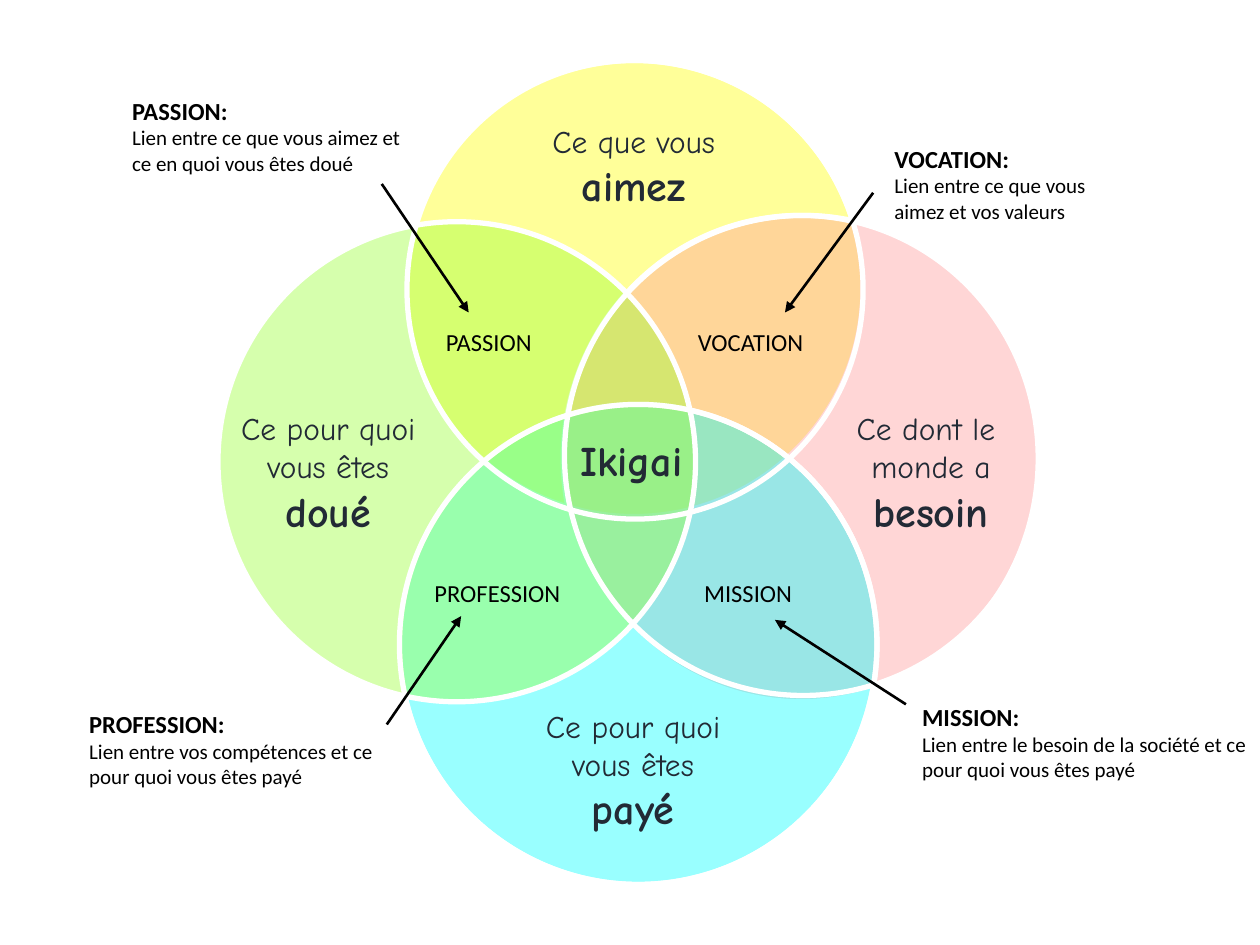
from pptx import Presentation
from pptx.dml.color import RGBColor
from pptx.enum.shapes import MSO_CONNECTOR as Connector, MSO_SHAPE as Shape
from pptx.enum.text import MSO_AUTO_SIZE as AutoSize, PP_ALIGN as Align
from pptx.oxml.ns import qn
from pptx.util import Inches, Pt
from lxml.etree import SubElement

COLORS = {
    "love": "FFFF00",
    "need": "FF9999",
    "paid": "00FFFF",
    "skill": "99FF33",
    "outline": "FFFFFF",
    "heading": "222A35",
    "text": "000000",
}
LABEL_FONT = "Calibri"
CIRCLE_FONT = "Comic Neue"


def color(name):
    return RGBColor.from_string(COLORS[name])


def line(text, size=14, font=LABEL_FONT, tone="text", bold=False):
    return {"text": text, "size": size, "font": font, "tone": tone, "bold": bold}


class Diagram:
    def __init__(self, page, opacity=40):
        self.page = page
        self.opacity = opacity

    def circle(self, left, top, width, height, fill=None):
        oval = self.page.shapes.add_shape(
            Shape.OVAL, Inches(left), Inches(top), Inches(width), Inches(height))
        oval.shadow.inherit = False
        oval.line.color.rgb = color("outline")
        oval.line.width = Pt(3)
        if fill is None:
            oval.fill.background()
            return
        oval.fill.solid()
        oval.fill.fore_color.rgb = color(fill)
        tint = oval._element.spPr.find(qn("a:solidFill")).find(qn("a:srgbClr"))
        SubElement(tint, qn("a:alpha")).set("val", str(self.opacity * 1000))

    def text(self, left, top, width, height, lines, align=Align.LEFT, wrap=False):
        box = self.page.shapes.add_textbox(
            Inches(left), Inches(top), Inches(width), Inches(height))
        frame = box.text_frame
        frame.word_wrap = wrap
        frame.auto_size = AutoSize.SHAPE_TO_FIT_TEXT
        for index, item in enumerate(lines):
            para = frame.add_paragraph() if index else frame.paragraphs[0]
            para.alignment = align
            span = para.add_run()
            span.text = item["text"]
            span.font.size = Pt(item["size"])
            span.font.name = item["font"]
            span.font.bold = item["bold"]
            span.font.color.rgb = color(item["tone"])

    def heading(self, left, top, width, height, *words):
        *intro, key = words
        lines = [line(word, 18, CIRCLE_FONT, "heading") for word in intro]
        lines.append(line(key, 24, CIRCLE_FONT, "heading", bold=True))
        self.text(left, top, width, height, lines, Align.CENTER)

    def note(self, left, top, width, title, detail):
        lines = [line(f"{title}:", bold=True), line(detail, 12)]
        self.text(left, top, width, 0.74, lines, wrap=True)

    def arrow(self, start_x, start_y, end_x, end_y):
        pointer = self.page.shapes.add_connector(
            Connector.STRAIGHT, Inches(start_x), Inches(start_y),
            Inches(end_x), Inches(end_y))
        pointer.line.color.rgb = color("text")
        pointer.line.width = Pt(1.5)
        properties = pointer._element.spPr
        SubElement(properties.find(qn("a:ln")), qn("a:tailEnd")).set("type", "triangle")
        SubElement(properties, qn("a:effectLst"))


def main():
    deck = Presentation()
    deck.slide_width, deck.slide_height = Inches(10), Inches(7.5)
    diagram = Diagram(deck.slides.add_slide(deck.slide_layouts[6]))

    for circle in [
        (3.21, 0.48, 3.64, 3.62, "love"),
        (4.47, 1.71, 3.77, 3.86, "need"),
        (3.17, 3.21, 3.79, 3.81, "paid"),
        (1.73, 1.76, 3.79, 3.81, "skill"),
        (3.23, 0.48, 3.62, 3.64),
        (4.48, 1.71, 3.79, 3.81),
        (3.17, 3.21, 3.79, 3.81),
    ]:
        diagram.circle(*circle)

    diagram.heading(4.45, 3.4, 1.12, 0.5, "Ikigai")
    for left, top, width, name in [
        (3.44, 2.55, 1.01, "PASSION"),
        (5.44, 2.55, 1.18, "VOCATION"),
        (3.35, 4.54, 1.37, "PROFESSION"),
        (5.49, 4.54, 1, "MISSION"),
    ]:
        diagram.text(left, top, width, 0.34, [line(name)])

    for heading in [
        (4.25, 0.92, 1.56, 0.81, "Ce que vous", "aimez"),
        (1.79, 3.2, 1.63, 1.11, "Ce pour quoi", "vous êtes", "doué"),
        (6.66, 3.2, 1.46, 1.11, "Ce dont le ", "monde a", "besoin"),
        (4.21, 5.56, 1.63, 1.11, "Ce pour quoi", "vous êtes", "payé"),
    ]:
        diagram.heading(*heading)

    for arrow in [
        (3.03, 1.46, 3.72, 2.48),
        (6.93, 1.53, 6.23, 2.48),
        (7.19, 5.59, 6.15, 4.92),
        (3.07, 5.75, 3.66, 4.89),
    ]:
        diagram.arrow(*arrow)

    for note in [
        (7, 1.09, 2.05, "VOCATION", "Lien entre ce que vous aimez et vos valeurs"),
        (7.22, 5.52, 2.83, "MISSION",
         "Lien entre le besoin de la société et ce pour quoi vous êtes payé"),
        (0.61, 5.58, 2.6, "PROFESSION",
         "Lien entre vos compétences et ce pour quoi vous êtes payé"),
        (0.95, 0.71, 2.5, "PASSION",
         "Lien entre ce que vous aimez et ce en quoi vous êtes doué"),
    ]:
        diagram.note(*note)

    deck.save("out.pptx")


if __name__ == "__main__":
    main()
